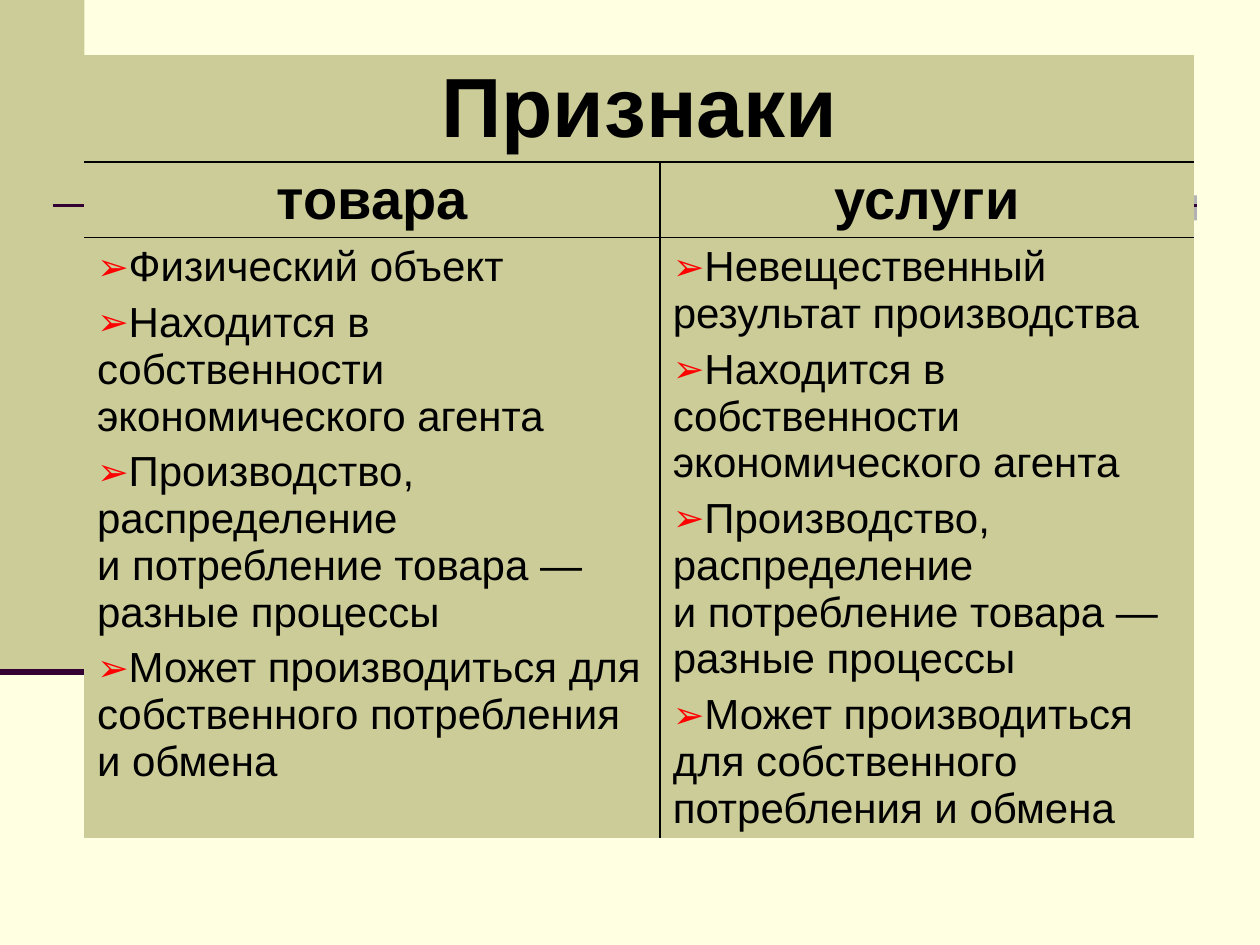
from lxml import etree
from pptx import Presentation, util as u
from pptx.dml.color import RGBColor
from pptx.enum import shapes, text
from pptx.oxml import ns

KHAKI, PLUM, BLACK = "CCCC99", "330033", "000000"
HEAD = dict(size=u.Pt(48), bold=True)
SUB = dict(size=u.Pt(32), bold=True)
BODY = dict(size=u.Pt(24), bold=False)

OWNED = "Находится в собственности экономического агента"
STAGES = "Производство, распределение\nи потребление товара — разные процессы"
USE = "Может производиться для собственного потребления и обмена"
GOODS = ["Физический объект", OWNED, STAGES, USE]
SERVICE = ["Невещественный результат производства", OWNED, STAGES, USE]


def color(code):
    return RGBColor.from_string(code)


def node(parent, tag, **attrs):
    return etree.SubElement(parent, ns.qn(tag), attrs)


class Slide:
    font = dict(name="Arial")

    def __init__(self, deck, back):
        self.page = deck.slides.add_slide(deck.slide_layouts[6])
        fill = self.page.background.fill
        fill.solid()
        fill.fore_color.rgb = color(back)

    def rect(self, left, top, width, height, fill):
        box = self.page.shapes.add_shape(
            shapes.MSO_SHAPE.RECTANGLE, *map(u.Inches, (left, top, width, height)))
        box.shadow.inherit = False
        box.fill.solid()
        box.fill.fore_color.rgb = color(fill)
        box.line.fill.background()

    def rule(self, left, right, top, width):
        line = self.page.shapes.add_connector(
            shapes.MSO_CONNECTOR.STRAIGHT, *map(u.Inches, (left, top, right, top)))
        line.line.color.rgb = color(PLUM)
        line.line.width = u.Pt(width)
        node(line._element.spPr, "a:effectLst")

    def table(self, left, top, cols, rows):
        frame = self.page.shapes.add_table(
            len(rows), len(cols), *map(u.Inches, (left, top, sum(cols), sum(rows))))
        grid = frame.table
        grid.first_row = grid.horz_banding = False
        for col, width in zip(grid.columns, cols):
            col.width = u.Inches(width)
        for row, height in zip(grid.rows, rows):
            row.height = u.Inches(height)
        return grid

    def cell(self, cell, lines, style, sides, bullet=False):
        for side in "LRTB":
            edge = node(cell._tc.get_or_add_tcPr(), f"a:ln{side}", w=str(u.Pt(1)))
            if side in sides:
                node(node(edge, "a:solidFill"), "a:srgbClr", val=BLACK)
            else:
                node(edge, "a:noFill")
        cell.fill.solid()
        cell.fill.fore_color.rgb = color(KHAKI)
        for i, line in enumerate(lines):
            frame = cell.text_frame
            para = frame.add_paragraph() if i else frame.paragraphs[0]
            para.text = line
            if bullet:
                self.bullet(para)
            else:
                para.alignment = text.PP_ALIGN.CENTER
            if i:
                para.space_before = u.Pt(5)
            for run in para.runs:
                for key, value in {**self.font, **style}.items():
                    setattr(run.font, key, value)
                run.font.color.rgb = color(BLACK)

    def bullet(self, para):
        props = para._p.get_or_add_pPr()
        props.set("marL", "0")
        props.set("indent", "0")
        node(node(props, "a:buClr"), "a:srgbClr", val="FF0000")
        node(props, "a:buSzPct", val="90000")
        node(props, "a:buFont", typeface="Arial")
        node(props, "a:buChar", char="➢")


def main():
    deck = Presentation()
    deck.slide_width, deck.slide_height = u.Inches(10), u.Inches(7.5)
    slide = Slide(deck, "FFFFE1")
    slide.rect(0, 0, 0.67, 5.33, KHAKI)
    slide.rect(7.5, 1.55, 2, 0.2, "B2B2B2")
    slide.rule(0.42, 9.5, 1.63, 1.5)
    slide.rule(0, 0.67, 5.33, 3.5)

    grid = slide.table(0.67, 0.44, [4.57, 4.24], [0.84, 0.6, 4.76])
    grid.cell(0, 0).merge(grid.cell(0, 1))
    slide.cell(grid.cell(0, 0), ["Признаки"], HEAD, "B")
    slide.cell(grid.cell(0, 1), [], HEAD, "B")
    sets = [("товара", GOODS, "R"), ("услуги", SERVICE, "L")]
    for col, (name, traits, side) in enumerate(sets):
        slide.cell(grid.cell(1, col), [name], SUB, "TB" + side)
        slide.cell(grid.cell(2, col), traits, BODY, "T" + side, bullet=True)
    deck.save("out.pptx")


if __name__ == "__main__":
    main()
